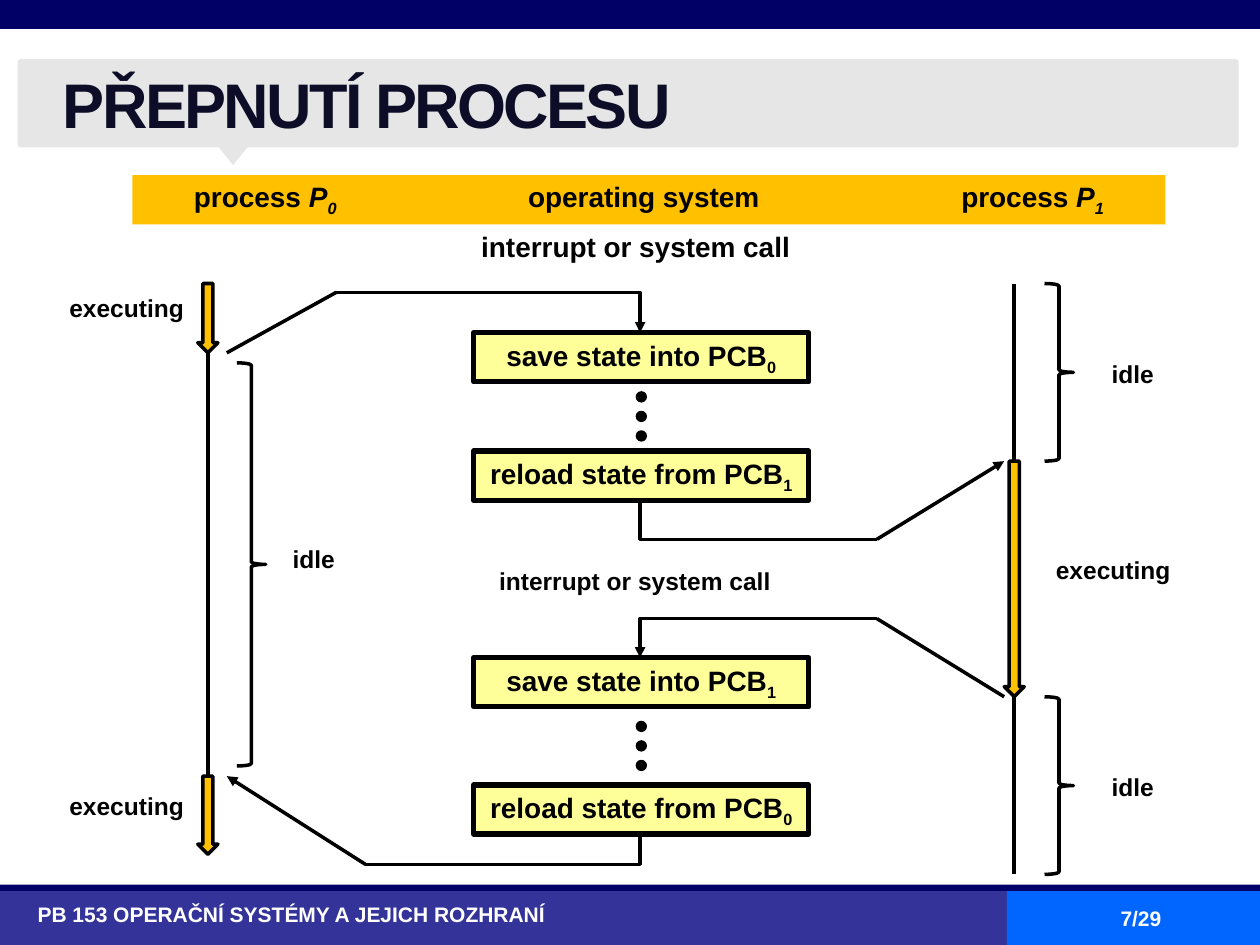
from lxml.etree import SubElement
from pptx import Presentation
from pptx.dml.color import RGBColor
from pptx.enum.shapes import MSO_CONNECTOR, MSO_SHAPE
from pptx.enum.text import MSO_ANCHOR, PP_ALIGN
from pptx.oxml.ns import qn
from pptx.util import Inches, Pt

COLORS = {
    "navy": "000066",
    "indigo": "333399",
    "blue": "0066FF",
    "gray": "E6E6E6",
    "title": "0D0D28",
    "gold": "FFC000",
    "yellow": "FFFF99",
    "black": "000000",
    "white": "FFFFFF",
}


def rgb(name):
    """Return the named palette colour."""
    return RGBColor.from_string(COLORS[name])


def write(frame, text, italic="", sub="", size=16, color="black", align=PP_ALIGN.CENTER,
          anchor=MSO_ANCHOR.TOP, margins=(0.1, 0.05), spacing=None, tracking=None):
    """Write bold text, an optional italic symbol and its subscript into a frame."""
    frame.word_wrap = True
    frame.vertical_anchor = anchor
    frame.margin_left = frame.margin_right = Inches(margins[0])
    frame.margin_top = frame.margin_bottom = Inches(margins[1])
    paragraph = frame.paragraphs[0]
    paragraph.alignment = align
    if spacing:
        paragraph.line_spacing = Pt(spacing)
    for part, slanted, lowered in ((text, False, False), (italic, True, False),
                                   (sub, bool(italic), True)):
        if not part:
            continue
        run = paragraph.add_run()
        run.text = part
        run.font.name = "Arial"
        run.font.size = Pt(size)
        run.font.bold = True
        run.font.italic = slanted
        run.font.color.rgb = rgb(color)
        if lowered:
            run.font._element.set("baseline", "-25000")
        if tracking:
            run.font._element.set("spc", str(int(tracking * 100)))


def add_label(slide, box, text, **style):
    """Add a text box."""
    label = slide.shapes.add_textbox(*map(Inches, box))
    write(label.text_frame, text, **style)


def add_block(slide, kind, box, fill=None, line=None, adjust=()):
    """Add a preset shape with plain fill and outline."""
    block = slide.shapes.add_shape(kind, *map(Inches, box))
    block.shadow.inherit = False
    for index, value in enumerate(adjust):
        block.adjustments[index] = value
    if fill:
        block.fill.solid()
        block.fill.fore_color.rgb = rgb(fill)
    else:
        block.fill.background()
    if line:
        block.line.color.rgb = rgb("black")
        block.line.width = Pt(line)
    else:
        block.line.fill.background()
    return block


def add_line(slide, start, end, kind=MSO_CONNECTOR.STRAIGHT, arrow=False):
    """Add a black connector with an optional arrowhead at its end."""
    connector = slide.shapes.add_connector(kind, *map(Inches, (*start, *end)))
    connector.line.color.rgb = rgb("black")
    connector.line.width = Pt(2)
    properties = connector._element.spPr
    if arrow:
        SubElement(properties.find(qn("a:ln")), qn("a:tailEnd"), type="triangle")
    SubElement(properties, qn("a:effectLst"))
    return connector


def add_elbow(slide, start, end, down_first=False, arrow=False):
    """Add a one-bend connector that leaves sideways or downwards."""
    (x1, y1), (x2, y2) = start, end
    if down_first:
        cx, cy, dx, dy = (x1 + x2) / 2, (y1 + y2) / 2, x2 - x1, y2 - y1
        start, end = (cx - dy / 2, cy + dx / 2), (cx + dy / 2, cy - dx / 2)
    elbow = add_line(slide, start, end, MSO_CONNECTOR.ELBOW, arrow)
    properties = elbow._element.spPr
    properties.find(qn("a:prstGeom")).set("prst", "bentConnector2")
    if down_first:
        properties.find(qn("a:xfrm")).set("rot", "5400000")


def add_title(slide, box, text):
    """Draw the top stripe and the title callout."""
    left, top, width, height = box
    add_block(slide, MSO_SHAPE.RECTANGLE, (0, 0, 10, 0.23), "navy")
    add_block(slide, MSO_SHAPE.ROUNDED_RECTANGLE, box, "gray", adjust=[0.035])
    pointer = add_block(slide, MSO_SHAPE.ISOSCELES_TRIANGLE,
                        (left + 1.58, top + height - 0.02, 0.26, 0.16), "gray")
    pointer.rotation = 180
    add_label(slide, (left + 0.36, top - 0.17, width - 0.39, 1.09), text, size=36,
              color="title", align=PP_ALIGN.LEFT, anchor=MSO_ANCHOR.MIDDLE,
              margins=(0, 0), spacing=40, tracking=-1.5)


def add_footer(slide, box, course, page):
    """Draw the footer with course name and page number."""
    left, top, width, height = box
    page_left = left + 7.99
    add_block(slide, MSO_SHAPE.RECTANGLE, box, "indigo")
    add_block(slide, MSO_SHAPE.RECTANGLE, (page_left, top, width - 7.99, height), "blue")
    add_block(slide, MSO_SHAPE.RECTANGLE, (left, top - 0.05, width, 0.05), "navy")
    add_label(slide, (left + 0.2, top + 0.04, 7.8, 0.34), course, size=12, color="white",
              align=PP_ALIGN.LEFT)
    add_label(slide, (page_left + 0.16, top + 0.12, 1.81, 0.2), page, size=12,
              color="white", margins=(0, 0))


def add_heading_band(slide, box):
    """Draw the band that names the three columns."""
    left, top, width, height = box
    add_block(slide, MSO_SHAPE.RECTANGLE, box, "gold")
    for offset, span, text, symbol, index in ((0, 2.11, "process ", "P", "0"),
                                              (2.81, 2.5, "operating system", "", ""),
                                              (6.17, 1.95, "process ", "P", "1")):
        add_label(slide, (left + offset, top - 0.01, span, 0.37), text,
                  italic=symbol, sub=index)


def add_switch(slide, box, saved, reloaded):
    """Draw the save and reload steps with three dots midway between them."""
    left, top, width, height = box
    step, dot, pitch = 0.39, 0.08, 0.155
    for y, text, index in ((top, "save state into PCB", saved),
                           (top + height - step, "reload state from PCB", reloaded)):
        block = add_block(slide, MSO_SHAPE.RECTANGLE, (left, y, width, step), "yellow", 3)
        write(block.text_frame, text, sub=index, anchor=MSO_ANCHOR.MIDDLE, margins=(0.05, 0))
    for row in (-1, 0, 1):
        add_block(slide, MSO_SHAPE.OVAL,
                  (left + (width - dot) / 2, top + (height - dot) / 2 + row * pitch, dot, dot),
                  "black", 0.75)


def add_process(slide, box, phases, brace_inset=0.0):
    """Draw a process timeline from its executing and idle phases."""
    left, top, width, height = box
    axis = left + 0.08
    for state, start, length, label_x, label_y in phases:
        y = top + start
        if state == "executing":
            add_block(slide, MSO_SHAPE.DOWN_ARROW, (left, y, 0.16, length), "gold", 2, [0.5, 0.5])
        else:
            add_line(slide, (axis, y), (axis, y + length))
            add_block(slide, MSO_SHAPE.RIGHT_BRACE,
                      (left + width - 0.23, y + brace_inset, 0.23, length - 2 * brace_inset),
                      line=2, adjust=[0.084, 0.5])
        label_width = 1.25 if state == "executing" else 0.78
        add_label(slide, (axis + label_x, top + label_y, label_width, 0.34), state, size=14)


def add_transfers(slide, box):
    """Draw the paths of control between the processes and the system."""
    left, top, width, height = box
    right, bottom, middle = left + width, top + height, 5.08
    first_bend, right_bend, last_bend = (2.67, top), 6.96, (2.9, bottom)
    add_line(slide, (left, top + 0.48), first_bend)
    add_elbow(slide, first_bend, (middle, top + 0.32), arrow=True)
    add_elbow(slide, (middle, top + 1.65), (right_bend, top + 1.96), down_first=True)
    add_line(slide, (right_bend, top + 1.96), (right, top + 1.34), arrow=True)
    add_line(slide, (right_bend, top + 2.59), (right, top + 3.21))
    add_elbow(slide, (right_bend, top + 2.59), (middle, top + 2.9), arrow=True)
    add_elbow(slide, (middle, bottom - 0.23), last_bend, down_first=True)
    add_line(slide, last_bend, (left, bottom - 0.7), arrow=True)


def main():
    """Build the process switch slide."""
    deck = Presentation()
    deck.slide_width, deck.slide_height = Inches(10), Inches(7.5)
    slide = deck.slides.add_slide(deck.slide_layouts[6])
    add_title(slide, (0.14, 0.47, 9.69, 0.7), "PŘEPNUTÍ PROCESU")
    add_footer(slide, (0, 7.07, 10, 0.43), "PB 153 OPERAČNÍ SYSTÉMY A JEJICH ROZHRANÍ", "7/29")
    add_heading_band(slide, (1.05, 1.39, 8.2, 0.39))
    add_switch(slide, (3.76, 2.64, 2.66, 1.33), "0", "1")
    add_switch(slide, (3.76, 5.22, 2.66, 1.4), "1", "0")
    add_label(slide, (3.52, 1.77, 3.05, 0.37), "interrupt or system call")
    add_label(slide, (3.36, 4.44, 3.36, 0.34), "interrupt or system call", size=14)
    add_process(slide, (1.57, 2.25, 0.54, 4.53), [("executing", 0, 0.55, -1.27, 0.03),
                                                  ("idle", 0.55, 3.36, 0.45, 2.02),
                                                  ("executing", 3.91, 0.62, -1.27, 3.98)], 0.08)
    add_process(slide, (7.97, 2.25, 0.55, 4.69), [("idle", 0, 1.41, 0.55, 0.55),
                                                  ("executing", 1.41, 1.87, 0.16, 2.11),
                                                  ("idle", 3.28, 1.41, 0.55, 3.83)])
    add_transfers(slide, (1.8, 2.32, 6.17, 4.54))
    deck.save("out.pptx")


if __name__ == "__main__":
    main()
